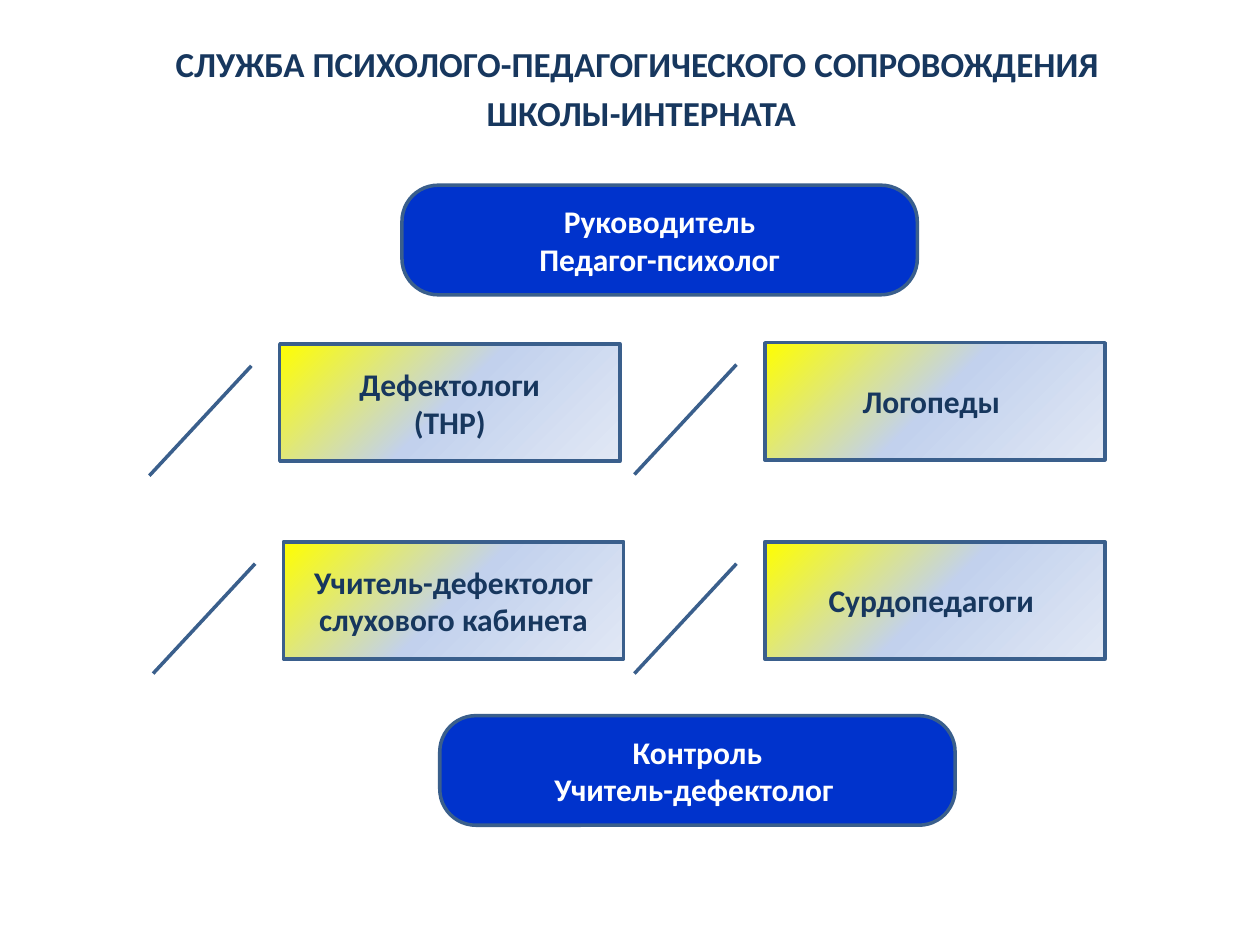
from copy import deepcopy
from dataclasses import dataclass

from pptx import Presentation
from pptx.dml.color import RGBColor
from pptx.enum import shapes, text
from pptx.util import Inches, Pt


@dataclass(frozen=True)
class Theme:
    font: str = "Calibri"
    title_size: int = 20
    box_size: int = 18
    line_width: int = 2
    dark: str = "17375E"
    light: str = "FFFFFF"
    outline: str = "3A5F8C"
    role_fill: str = "0033CC"
    callout_stops: tuple = ((0, "FFFF00"), (0.5, "C2D1ED"), (1, "E1E8F5"))


THEME = Theme()


def write_lines(frame, lines, size, color, space_before=0):
    """Fill a text frame with centred bold paragraphs."""
    frame.word_wrap = True
    for index, line in enumerate(lines):
        paragraph = frame.add_paragraph() if index else frame.paragraphs[0]
        paragraph.text = line
        paragraph.alignment = text.PP_ALIGN.CENTER
        if index and space_before:
            paragraph.space_before = Pt(space_before)
        font = paragraph.font
        font.name = THEME.font
        font.size = Pt(size)
        font.bold = True
        font.color.rgb = RGBColor.from_string(color)


def add_title(slide, lines):
    box = slide.shapes.add_textbox(Inches(0.59), Inches(0.29), Inches(9), Inches(0.47))
    write_lines(box.text_frame, lines, THEME.title_size, THEME.dark, space_before=4)


def add_box(slide, kind, left, top, width, height, lines, color):
    shape = slide.shapes.add_shape(
        kind, Inches(left), Inches(top), Inches(width), Inches(height))
    shape.shadow.inherit = False
    shape.line.color.rgb = RGBColor.from_string(THEME.outline)
    shape.line.width = Pt(THEME.line_width)
    shape.text_frame.vertical_anchor = text.MSO_ANCHOR.MIDDLE
    write_lines(shape.text_frame, lines, THEME.box_size, color)
    return shape


def add_role(slide, left, top, lines):
    shape = add_box(slide, shapes.MSO_SHAPE.ROUNDED_RECTANGLE,
                    left, top, 4.09, 0.87, lines, THEME.light)
    shape.adjustments[0] = 0.33
    shape.fill.solid()
    shape.fill.fore_color.rgb = RGBColor.from_string(THEME.role_fill)


def add_callout(slide, left, top, lines):
    shape = add_box(slide, shapes.MSO_SHAPE.LINE_CALLOUT_1,
                    left, top, 2.7, 0.93, lines, THEME.dark)
    fill_gradient(shape)


def fill_gradient(shape):
    """Apply the three-stop diagonal gradient, from top left to bottom right."""
    fill = shape.fill
    fill.gradient()
    fill.gradient_angle = 315
    stop_list = shape._element.spPr.gradFill.gsLst
    stop_list.append(deepcopy(stop_list[0]))
    for stop, (position, color) in zip(fill.gradient_stops, THEME.callout_stops):
        stop.position = position
        stop.color.rgb = RGBColor.from_string(color)


def main():
    presentation = Presentation()
    presentation.slide_width = Inches(10)
    presentation.slide_height = Inches(7.5)
    slide = presentation.slides.add_slide(presentation.slide_layouts[6])

    add_title(slide, ["СЛУЖБА ПСИХОЛОГО-ПЕДАГОГИЧЕСКОГО СОПРОВОЖДЕНИЯ ",
                      "ШКОЛЫ-ИНТЕРНАТА"])
    add_role(slide, 3.49, 5.68, ["Контроль", "Учитель-дефектолог "])
    add_role(slide, 3.19, 1.47, ["Руководитель", "Педагог-психолог"])

    specialists = [
        (2.22, 2.73, ["Дефектологи", "(ТНР)"]),
        (6.07, 2.72, ["Логопеды "]),
        (2.25, 4.3, ["Учитель-дефектолог слухового кабинета"]),
        (6.07, 4.3, ["Сурдопедагоги "]),
    ]
    for left, top, lines in specialists:
        add_callout(slide, left, top, lines)

    presentation.save("out.pptx")


if __name__ == "__main__":
    main()
